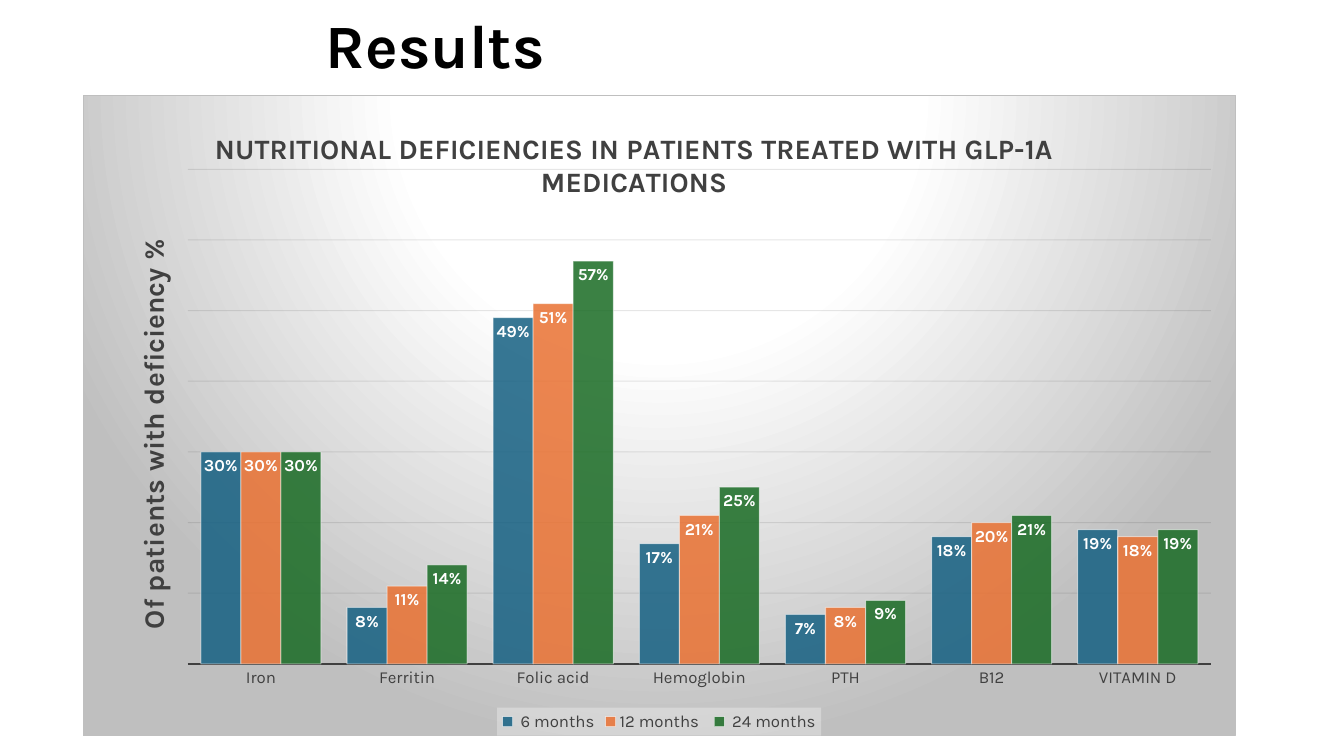
from pptx import Presentation
from pptx.chart.data import CategoryChartData
from pptx.dml.color import RGBColor
from pptx.enum.chart import XL_CHART_TYPE, XL_LABEL_POSITION, XL_LEGEND_POSITION, XL_TICK_MARK
from pptx.enum.text import MSO_ANCHOR, PP_ALIGN
from pptx.oxml import parse_xml
from pptx.oxml.ns import nsdecls, qn
from pptx.util import Cm, Pt

COLUMNS = XL_CHART_TYPE.COLUMN_CLUSTERED
INSIDE_END = XL_LABEL_POSITION.INSIDE_END
BOTTOM = XL_LEGEND_POSITION.BOTTOM
NO_TICKS = XL_TICK_MARK.NONE
MIDDLE = MSO_ANCHOR.MIDDLE
CENTER = PP_ALIGN.CENTER

BLACK = RGBColor(0x00, 0x00, 0x00)
WHITE = RGBColor(0xFF, 0xFF, 0xFF)
DARK_GREY = RGBColor(0x40, 0x40, 0x40)
GRID = RGBColor(0x0D, 0x0D, 0x0D)
BORDER = RGBColor(0xBF, 0xBF, 0xBF)
BLUE = RGBColor(0x15, 0x60, 0x82)
ORANGE = RGBColor(0xE9, 0x71, 0x32)
GREEN = RGBColor(0x19, 0x6B, 0x24)
FONT = "Karla"

HEADING = "Results"
CHART_TITLE = "NUTRITIONAL DEFICIENCIES IN PATIENTS TREATED WITH GLP-1A MEDICATIONS"
AXIS_TITLE = "Of patients with deficiency %"
NUTRIENTS = ["Iron", "Ferritin", "Folic acid", "Hemoglobin", "PTH", "B12", "VITAMIN D"]
PERIODS = [
    (" 6 months", BLUE, [0.30, 0.08, 0.49, 0.17, 0.07, 0.18, 0.19]),
    ("12 months ", ORANGE, [0.30, 0.11, 0.51, 0.21, 0.08, 0.20, 0.18]),
    (" 24 months", GREEN, [0.30, 0.14, 0.57, 0.25, 0.09, 0.21, 0.19]),
]

CHART_FILL = f"""<c:spPr {nsdecls("c", "a")}>
  <a:gradFill><a:gsLst>
    <a:gs pos="0"><a:srgbClr val="{WHITE}"/></a:gs>
    <a:gs pos="39000"><a:srgbClr val="{WHITE}"/></a:gs>
    <a:gs pos="100000"><a:srgbClr val="{BORDER}"/></a:gs>
  </a:gsLst><a:path path="circle">
    <a:fillToRect l="50000" t="-80000" r="50000" b="180000"/>
  </a:path></a:gradFill>
  <a:ln w="9525"><a:solidFill><a:srgbClr val="{BORDER}"/></a:solidFill></a:ln>
</c:spPr>"""
LEGEND_FILL = f"""<c:spPr {nsdecls("c", "a")}>
  <a:solidFill><a:srgbClr val="F2F2F2"><a:alpha val="39000"/></a:srgbClr></a:solidFill>
</c:spPr>"""


def style_font(font, size, color, bold=False):
    font.name = FONT
    font.size = Pt(size)
    font.color.rgb = color
    font.bold = bold


def set_opacity(properties, *percents):
    """Give each colour in the shape properties its opacity, in order."""
    for color, percent in zip(properties.iter(qn("a:srgbClr")), percents):
        color.append(parse_xml(f'<a:alpha {nsdecls("a")} val="{percent * 1000}"/>'))


def manual_layout(x, y, size=None):
    """Layout in fractions of the chart; a size makes it an inner plot area."""
    entries = [("layoutTarget", "inner")] if size else []
    entries += [("xMode", "edge"), ("yMode", "edge"), ("x", x), ("y", y)]
    if size:
        entries += zip("wh", size)
    body = "".join(f'<c:{name} val="{value}"/>' for name, value in entries)
    return parse_xml(f'<c:layout {nsdecls("c")}><c:manualLayout>{body}</c:manualLayout></c:layout>')


def remove_layout(element):
    for layout in element.findall(qn("c:layout")):
        element.remove(layout)


def write_title(title, text, size, x, y):
    paragraph = title.text_frame.paragraphs[0]
    run = paragraph.add_run()
    run.text = text
    style_font(run.font, size, DARK_GREY, bold=True)
    element = title._element
    remove_layout(element)
    element.find(qn("c:overlay")).addprevious(manual_layout(x, y))


def add_heading(slide):
    box = slide.shapes.add_textbox(Cm(0.69), Cm(0), Cm(20.57), Cm(2.46))
    frame = box.text_frame
    frame.word_wrap = True
    frame.vertical_anchor = MIDDLE
    paragraph = frame.paragraphs[0]
    paragraph.alignment = CENTER
    paragraph.line_spacing = 0.9
    run = paragraph.add_run()
    run.text = HEADING
    style_font(run.font, 44, BLACK, bold=True)


def style_axes(chart):
    category_axis = chart.category_axis
    category_axis.major_tick_mark = NO_TICKS
    category_axis.minor_tick_mark = NO_TICKS
    category_axis.format.line.color.rgb = DARK_GREY
    category_axis.format.line.width = Pt(1.5)
    style_font(category_axis.tick_labels.font, 12, DARK_GREY)

    value_axis = chart.value_axis
    value_axis.minimum_scale, value_axis.maximum_scale = 0, 0.7
    value_axis.major_unit = 0.1
    value_axis.tick_labels.number_format = "0%"
    value_axis.tick_labels.number_format_is_linked = False
    value_axis.has_major_gridlines = True
    grid = value_axis.major_gridlines.format.line
    grid.color.rgb = GRID
    grid.width = Pt(0.75)
    set_opacity(value_axis._element.find(qn("c:majorGridlines")), 10)
    write_title(value_axis.axis_title, AXIS_TITLE, 20, 0.04, 0.215)
    body = value_axis.axis_title.text_frame._txBody.find(qn("a:bodyPr"))
    body.set("rot", "-5400000")
    body.set("vert", "horz")
    value_axis.visible = False


def style_columns(plot):
    plot.gap_width = 65
    plot.overlap = 0
    plot.vary_by_categories = False
    for series, (_, color, _) in zip(plot.series, PERIODS):
        series.format.fill.solid()
        series.format.fill.fore_color.rgb = color
        series.format.line.color.rgb = WHITE
        series.format.line.width = Pt(0.75)
        set_opacity(series._element.find(qn("c:spPr")), 85, 50)
        labels = series.data_labels
        labels.show_value = True
        labels.position = INSIDE_END
        labels.number_format = "0%"
        labels.number_format_is_linked = False
        style_font(labels.font, 12, WHITE, bold=True)


def add_deficiency_chart(slide):
    data = CategoryChartData(number_format="0%")
    data.categories = NUTRIENTS
    for name, _, values in PERIODS:
        data.add_series(name, values)
    chart = slide.shapes.add_chart(
        COLUMNS, Cm(2.08), Cm(2.4), Cm(29.06), Cm(16.15), data).chart
    style_font(chart.font, 10, BLACK)
    chart.has_title = True
    write_title(chart.chart_title, CHART_TITLE, 20, 0.11, 0.045)
    style_axes(chart)
    style_columns(chart.plots[0])

    chart.has_legend = True
    legend = chart.legend
    legend.position = BOTTOM
    legend.include_in_layout = False
    style_font(legend.font, 12, DARK_GREY)
    legend._element.find(qn("c:overlay")).addnext(parse_xml(LEGEND_FILL))

    chart_element = chart._chartSpace.find(qn("c:chart"))
    chart_element.addnext(parse_xml(CHART_FILL))
    plot_area = chart_element.find(qn("c:plotArea"))
    remove_layout(plot_area)
    plot_area.insert(0, manual_layout(0.091, 0.115, (0.888, 0.773)))


def main():
    presentation = Presentation()
    presentation.slide_width = Cm(33.87)
    presentation.slide_height = Cm(19.05)
    slide = presentation.slides.add_slide(presentation.slide_layouts[6])
    add_heading(slide)
    add_deficiency_chart(slide)
    presentation.save("out.pptx")


if __name__ == "__main__":
    main()
